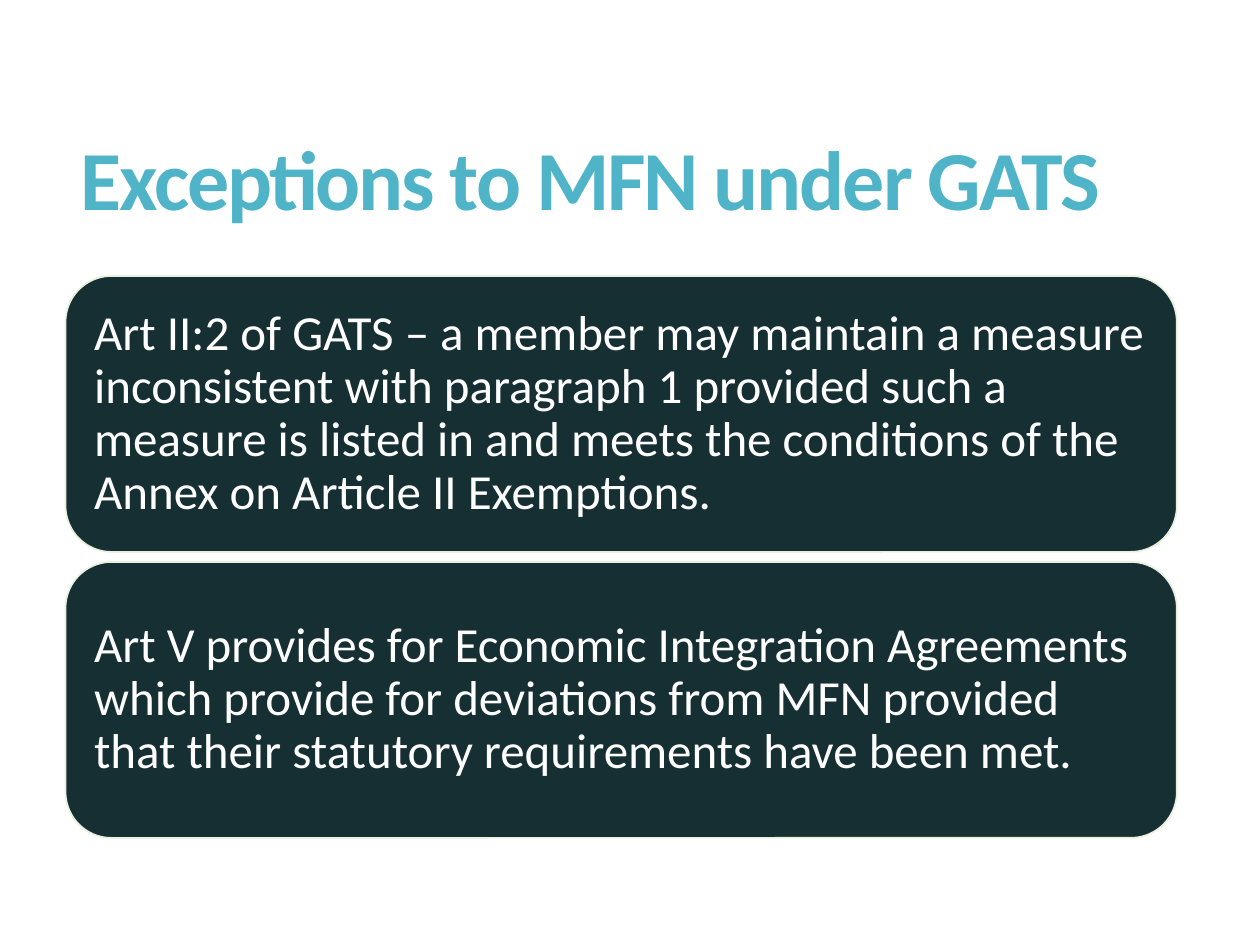
import pptx
import pptx.util
import pptx.dml.color
import pptx.enum.shapes
import pptx.enum.text

Inches, Pt = pptx.util.Inches, pptx.util.Pt
RGB = pptx.dml.color.RGBColor.from_string
ANCHOR, ALIGN = pptx.enum.text.MSO_ANCHOR, pptx.enum.text.PP_ALIGN

THEME = {
    "font": "Calibri",
    "title": RGB("50B4C8"), "title_size": Pt(48),
    "panel": RGB("162F33"), "edge": RGB("EAF0E0"),
    "body": RGB("FFFFFF"), "body_size": Pt(28),
}


def format_text(tf, color, size, bold=False):
    """Left-aligned, vertically centred text with tight lines."""
    tf.word_wrap = True
    tf.auto_size = pptx.enum.text.MSO_AUTO_SIZE.NONE
    tf.vertical_anchor = ANCHOR.MIDDLE
    for p in tf.paragraphs:
        p.alignment = ALIGN.LEFT
        p.line_spacing = 0.9
        for r in p.runs:
            r.font.name = THEME["font"]
            r.font.size, r.font.bold = size, bold
            r.font.color.rgb = color


prs = pptx.Presentation()
prs.slide_width, prs.slide_height = Inches(10), Inches(7.5)
s = prs.slides.add_slide(prs.slide_layouts[5])

# Title
title = s.shapes.title
title.left, title.top = Inches(0.54), Inches(0.55)
title.width, title.height = Inches(8.84), Inches(1.81)
title.text_frame.text = "Exceptions to MFN under GATS"
format_text(title.text_frame, THEME["title"], THEME["title_size"], bold=True)
title.text_frame.paragraphs[0].runs[0].font._element.set("spc", "-120")

# Stacked panels, one per exception
exceptions = [
    "Art II:2 of GATS – a member may maintain a measure inconsistent with "
    "paragraph 1 provided such a measure is listed in and meets the "
    "conditions of the Annex on Article II Exemptions.",
    "Art V provides for Economic Integration Agreements which provide for "
    "deviations from MFN provided that their statutory requirements have "
    "been met.",
]
left, top, width, height, gap = 0.52, 2.19, 8.82, 2.19, 0.08
for row, text in enumerate(exceptions):
    sp = s.shapes.add_shape(
        pptx.enum.shapes.MSO_SHAPE.ROUNDED_RECTANGLE,
        Inches(left), Inches(top + row * (height + gap)),
        Inches(width), Inches(height))
    sp.shadow.inherit = False
    sp.fill.solid()
    sp.fill.fore_color.rgb = THEME["panel"]
    sp.line.color.rgb = THEME["edge"]
    sp.line.width = Pt(1)
    tf = sp.text_frame
    tf.text = text
    tf.margin_left = tf.margin_right = Inches(0.12)
    tf.margin_top = tf.margin_bottom = Inches(0.12)
    format_text(tf, THEME["body"], THEME["body_size"])
    tf.paragraphs[0].space_after = Pt(10)

prs.save("out.pptx")
